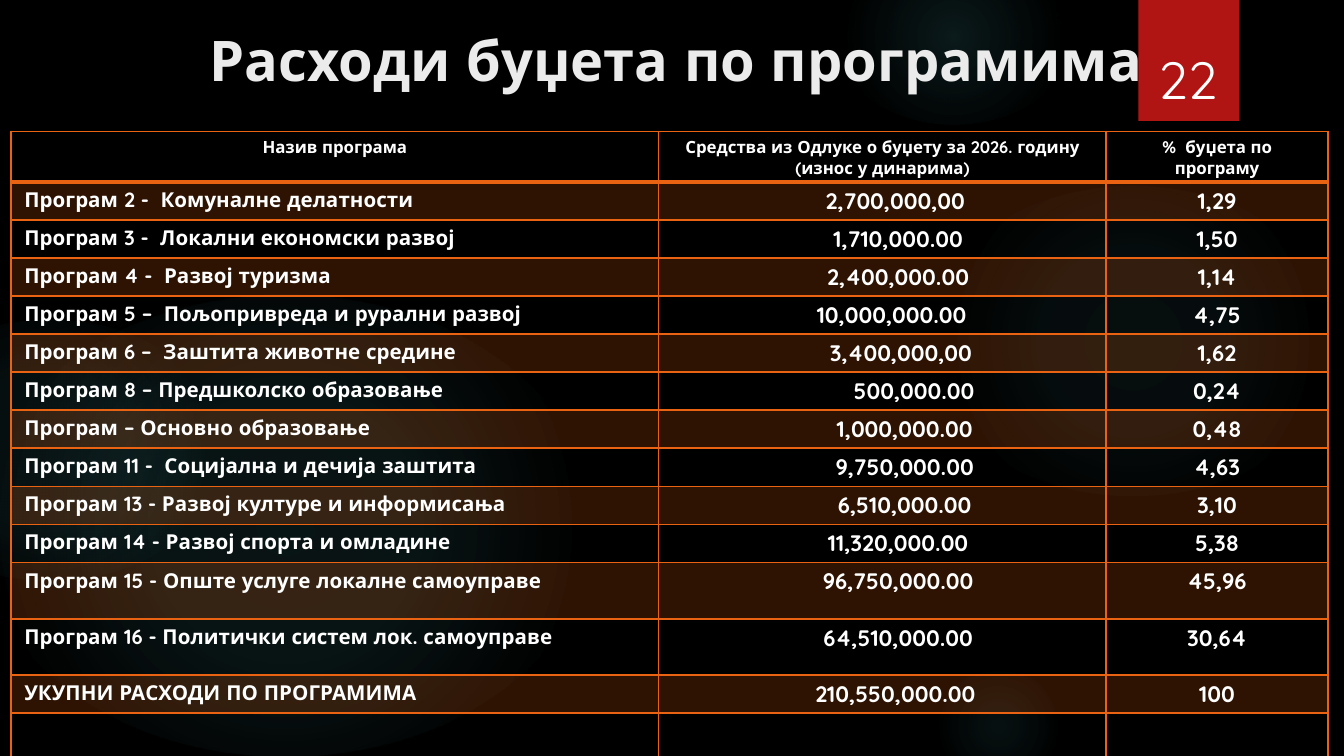
from dataclasses import dataclass

from lxml import etree
from pptx import Presentation
from pptx.dml.color import RGBColor
from pptx.enum.shapes import MSO_SHAPE
from pptx.enum.text import MSO_ANCHOR, PP_ALIGN
from pptx.oxml import parse_xml
from pptx.oxml.ns import nsdecls, qn
from pptx.util import Pt

OVAL, RECT = MSO_SHAPE.OVAL, MSO_SHAPE.RECTANGLE
LEFT, CENTER = PP_ALIGN.LEFT, PP_ALIGN.CENTER
MIDDLE, BOTTOM = MSO_ANCHOR.MIDDLE, MSO_ANCHOR.BOTTOM


@dataclass(frozen=True)
class Theme:
    font: str = "Quicksand"
    back: str = "000000"
    glow: str = "50B9C1"
    badge: str = "B01513"
    accent: str = "EA6312"
    title: str = "EBEBEB"
    text: str = "FFFFFF"
    title_size: float = 30
    number_size: float = 28
    header_size: float = 9
    name_size: float = 11
    value_size: float = 12


T = Theme()

# Box in points, then (stop %, opacity %) from the centre outwards
GLOWS = [
    ((496, 99.4, 221.8, 166.3), ((0, 7), (36, 6), (69, 0))),
    ((447.8, -27.4, 126, 94.3), ((0, 14), (36, 7), (73, 0))),
    ((496, 360, 77.8, 58.3), ((0, 9), (36, 5), (66, 0))),
    ((-12.2, 157.7, 329.8, 247.7), ((0, 11), (36, 10), (75, 0))),
    ((-66.2, 171.4, 185.8, 139.7), ((0, 8), (36, 8), (72, 0))),
]

HEADER = ("Назив програма",
          "Средства из Одлуке о буџету за 2026. годину (износ у динарима)",
          "%  буџета по програму")

# Programme, amount, share, extra left indent of the amount
PROGRAMS = [
    ("Програм 2 -  Комуналне делатности", "2,700,000,00", "1,29", 14),
    ("Програм 3 -  Локални економски развој", "1,710,000.00", "1,50", 17),
    ("Програм 4 -  Развој туризма", "2,400,000.00", "1,14", 17),
    ("Програм 5 –  Пољопривреда и рурални развој", "10,000,000.00", "4,75", 10),
    ("Програм 6 –  Заштита животне средине", "3,400,000,00", "1,62", 20),
    ("Програм 8 – Предшколско образовање", "500,000.00", "0,24", 34),
    ("Програм – Основно образовање", "1,000,000.00", "0,48", 24),
    ("Програм 11 -  Социјална и дечија заштита", "9,750,000.00", "4,63", 24),
    ("Програм 13 - Развој културе и информисања", "6,510,000.00", "3,10", 24),
    ("Програм 14 - Развој спорта и омладине", "11,320,000.00", "5,38", 17),
    ("Програм 15 - Опште услуге локалне самоуправе", "96,750,000.00", "45,96", 17),
    ("Програм 16 - Политички систем лок. самоуправе", "64,510,000.00", "30,64", 17),
    ("УКУПНИ РАСХОДИ ПО ПРОГРАМИМА", "210,550,000.00", "100", 14),
]

COL_WIDTHS = (347, 239.8, 118.8)
ROW_HEIGHTS = [26] + [20.4] * 10 + [30.2] * 2 + [20.4, 28.8]


def points(box):
    return [Pt(v) for v in box]


def rgb(color):
    return RGBColor.from_string(color)


def style(p, size, color, align=LEFT, bold=False):
    p.alignment = align
    f = p.font
    f.name, f.size, f.bold = T.font, Pt(size), bold
    f.color.rgb = rgb(color)


def add_text(slide, box, text, size, color, align, anchor, bold=False):
    tf = slide.shapes.add_textbox(*points(box)).text_frame
    tf.word_wrap, tf.vertical_anchor = True, anchor
    tf.text = text
    style(tf.paragraphs[0], size, color, align, bold)


def add_plain_shape(slide, kind, box):
    s = slide.shapes.add_shape(kind, *points(box))
    s.shadow.inherit = False
    s.line.fill.background()
    return s


def add_glow(slide, box, stops):
    s = add_plain_shape(slide, OVAL, box)
    gs = "".join(
        f'<a:gs pos="{pos * 1000}"><a:srgbClr val="{T.glow}">'
        f'<a:alpha val="{alpha * 1000}"/></a:srgbClr></a:gs>'
        for pos, alpha in stops)
    grad = parse_xml(
        f'<a:gradFill {nsdecls("a")}><a:gsLst>{gs}</a:gsLst><a:path path="circle">'
        '<a:fillToRect l="50000" t="50000" r="50000" b="50000"/></a:path></a:gradFill>')
    s._element.spPr.find(qn("a:prstGeom")).addnext(grad)


def add_badge(slide, box, number):
    x, y, w, h = box
    s = add_plain_shape(slide, RECT, box)
    s.fill.solid()
    s.fill.fore_color.rgb = rgb(T.badge)
    add_text(slide, (x + 1.5, y + 17.3, w - 4, h - 19.4), number,
             T.number_size, T.text, CENTER, BOTTOM)


def set_borders(cell, top, bottom):
    tc_pr = cell._tc.get_or_add_tcPr()
    widths = {"lnL": 1, "lnR": 1, "lnT": top, "lnB": bottom}
    for i, (tag, width) in enumerate(widths.items()):
        tc_pr.insert(i, parse_xml(
            f'<a:{tag} {nsdecls("a")} w="{Pt(width)}"><a:solidFill>'
            f'<a:srgbClr val="{T.accent}"/></a:solidFill></a:{tag}>'))


def fill_cell(cell, shaded):
    if not shaded:
        cell.fill.background()
        return
    cell.fill.solid()
    cell.fill.fore_color.rgb = rgb(T.accent)
    color = cell._tc.tcPr.find(qn("a:solidFill")).find(qn("a:srgbClr"))
    etree.SubElement(color, qn("a:alpha")).set("val", "20000")


def add_budget_table(slide, box):
    rows = [(*HEADER, 0), *PROGRAMS, ("", "", "", 0)]
    table = slide.shapes.add_table(len(rows), len(HEADER), *points(box)).table
    table.horz_banding = False
    for col, width in zip(table.columns, COL_WIDTHS):
        col.width = Pt(width)
    for i, (*texts, indent) in enumerate(rows):
        table.rows[i].height = Pt(ROW_HEIGHTS[i])
        for j, text in enumerate(texts):
            cell = table.cell(i, j)
            cell.margin_left = Pt(7.2 + (indent if j == 1 else 0))
            cell.margin_right = Pt(7.2)
            cell.margin_top = cell.margin_bottom = Pt(2.7)
            cell.text = text
            if i == 0:
                size = T.header_size
            else:
                size = T.name_size if j == 0 else T.value_size
            align = LEFT if i and j == 0 else CENTER
            style(cell.text_frame.paragraphs[0], size, T.text, align, True)
            fill_cell(cell, shaded=i % 2 == 1)
            # Heavier rule below the header
            set_borders(cell, top=2 if i == 1 else 1, bottom=2 if i == 0 else 1)


def build_slide(prs):
    slide = prs.slides.add_slide(prs.slide_layouts[6])
    # Backdrop
    slide.background.fill.solid()
    slide.background.fill.fore_color.rgb = rgb(T.back)
    for box, stops in GLOWS:
        add_glow(slide, box, stops)
    # Title and slide number
    add_badge(slide, (609.8, 0, 54, 64.8), "22")
    add_text(slide, (105.1, 8.6, 613.4, 46.1), "Расходи буџета по програмима",
             T.title_size, T.title, LEFT, MIDDLE, True)
    # Programme budget
    add_budget_table(slide, (5.8, 70.4, sum(COL_WIDTHS), sum(ROW_HEIGHTS)))


def main():
    prs = Presentation()
    prs.slide_width, prs.slide_height = Pt(720), Pt(405)
    build_slide(prs)
    prs.save("out.pptx")


if __name__ == "__main__":
    main()
